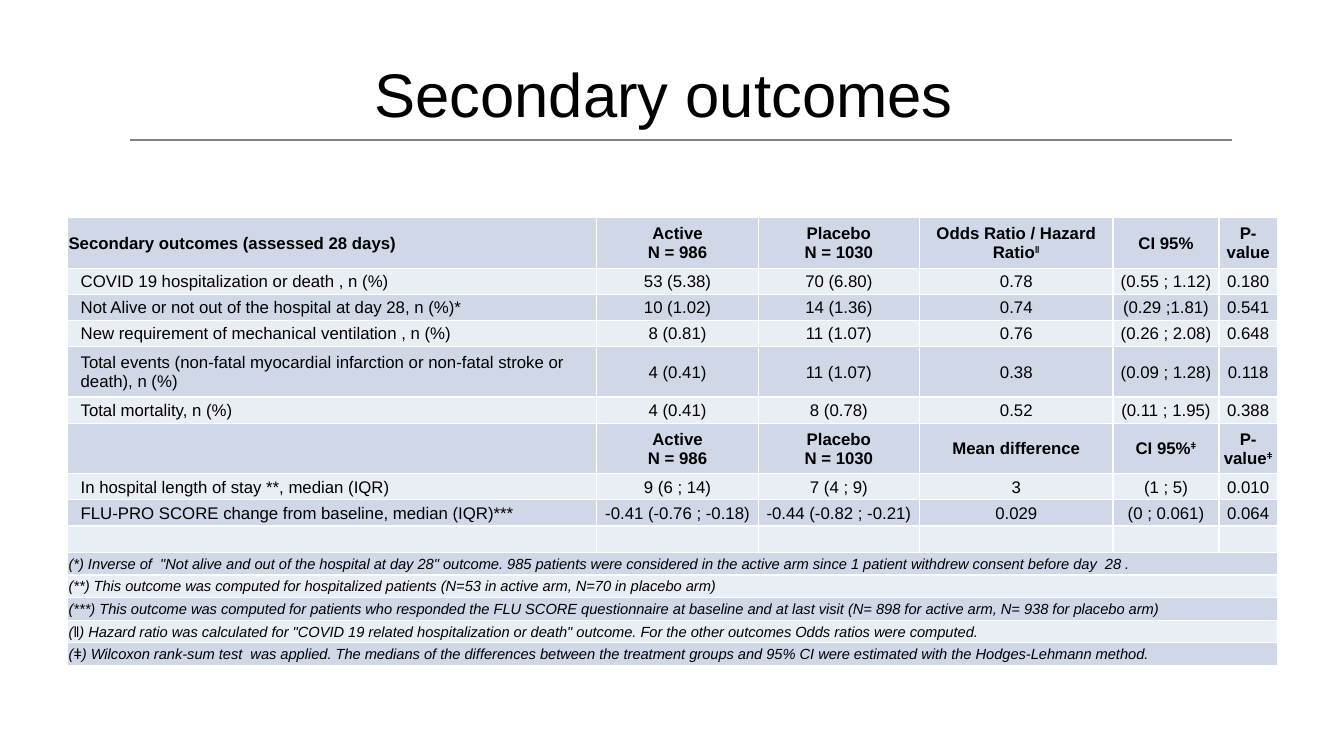
"""Build the secondary outcomes slide of a clinical trial report."""
from dataclasses import dataclass

from lxml.etree import SubElement
from pptx import Presentation
from pptx.dml.color import RGBColor
from pptx.enum.shapes import MSO_CONNECTOR
from pptx.enum.text import MSO_ANCHOR, PP_ALIGN
from pptx.oxml import parse_xml
from pptx.oxml.ns import nsdecls, qn
from pptx.util import Inches, Pt

TITLE = "Secondary outcomes "
ARMS = ("Active\nN = 986", "Placebo\nN = 1030")
RATIO_HEADER = ("Secondary outcomes (assessed 28 days)", *ARMS,
                "Odds Ratio / Hazard Ratio^ǁ", "CI 95%", "P-value")
RATIO_OUTCOMES = [
    ("COVID 19 hospitalization or death , n (%)",
     "53 (5.38)", "70 (6.80)", "0.78", "(0.55 ; 1.12)", "0.180"),
    ("Not Alive or not out of the hospital at day 28, n (%)*",
     "10 (1.02)", "14 (1.36)", "0.74", "(0.29 ;1.81)", "0.541"),
    ("New requirement of mechanical ventilation , n (%)",
     "8 (0.81)", "11 (1.07)", "0.76", "(0.26 ; 2.08)", "0.648"),
    ("Total events (non-fatal myocardial infarction or non-fatal stroke or death), n (%)",
     "4 (0.41)", "11 (1.07)", "0.38", "(0.09 ; 1.28)", "0.118"),
    ("Total mortality, n (%)",
     "4 (0.41)", "8 (0.78)", "0.52", "(0.11 ; 1.95)", "0.388"),
]
DIFFERENCE_HEADER = ("", *ARMS, "Mean difference", "CI 95%^ǂ", "P-value^ǂ")
DIFFERENCE_OUTCOMES = [
    ("In hospital length of stay **, median (IQR)",
     "9 (6 ; 14)", "7 (4 ; 9)", "3", "(1 ; 5)", "0.010"),
    ("FLU-PRO SCORE change from baseline, median (IQR)***",
     "-0.41 (-0.76 ; -0.18)", "-0.44 (-0.82 ; -0.21)", "0.029", "(0 ; 0.061)", "0.064"),
]
SPACER = ("",) * 6
FOOTNOTES = [
    '(*) Inverse of  "Not alive and out of the hospital at day 28" outcome. 985 patients were '
    "considered in the active arm since 1 patient withdrew consent before day  28 .",
    "(**) This outcome was computed for hospitalized patients (N=53 in active arm, "
    "N=70 in placebo arm)",
    "(***) This outcome was computed for patients who responded the FLU SCORE questionnaire "
    "at baseline and at last visit (N= 898 for active arm, N= 938 for placebo arm)",
    '(ǁ) Hazard ratio was calculated for "COVID 19 related hospitalization or death" outcome. '
    "For the other outcomes Odds ratios were computed.",
    "(ǂ) Wilcoxon rank-sum test  was applied. The medians of the differences between the "
    "treatment groups and 95% CI were estimated with the Hodges-Lehmann method.",
]
COLUMN_WIDTHS = (5.25, 1.6, 1.6, 1.92, 1.05, 0.58)
TALL, NORMAL, NOTE = 0.5, 0.26, 0.225
WRAP_LENGTH = 60


@dataclass(frozen=True)
class Theme:
    font: str = "Arial"
    ink: RGBColor = RGBColor(0, 0, 0)
    rule: RGBColor = RGBColor(0x80, 0x80, 0x80)
    bands: tuple = (RGBColor(0xD0, 0xD8, 0xE8), RGBColor(0xE9, 0xED, 0xF4))
    border: str = "FFFFFF"
    title_size: float = 44
    cell_size: float = 12
    note_size: float = 10.5


THEME = Theme()


def set_font(paragraph, size, bold=False, italic=False):
    font = paragraph.font
    font.name, font.size, font.bold, font.italic = THEME.font, Pt(size), bold, italic
    font.color.rgb = THEME.ink


def style_cell(cell, band):
    cell.margin_left = cell.margin_right = cell.margin_top = Inches(0.01)
    cell.margin_bottom = 0
    cell.vertical_anchor = MSO_ANCHOR.MIDDLE
    properties = cell._tc.get_or_add_tcPr()
    for order, side in enumerate("LRTB"):
        properties.insert(order, parse_xml(
            f'<a:ln{side} {nsdecls("a")} w="12700"><a:solidFill>'
            f'<a:srgbClr val="{THEME.border}"/></a:solidFill></a:ln{side}>'))
    cell.fill.solid()
    cell.fill.fore_color.rgb = THEME.bands[band]


def write_cell(cell, content, size, **emphasis):
    paragraph = cell.text_frame.paragraphs[0]
    label, _, marker = content.partition("^")
    paragraph.text = label
    if marker:
        superscript = paragraph.add_run()
        superscript.text = marker
        superscript.font._element.set("baseline", "30000")
    set_font(paragraph, size, **emphasis)
    if not content:
        paragraph._p.get_or_add_endParaRPr().set("sz", str(int(size * 100)))
    return paragraph


def add_outcomes_table(slide):
    headers = (RATIO_HEADER, DIFFERENCE_HEADER)
    results = [RATIO_HEADER, *RATIO_OUTCOMES, DIFFERENCE_HEADER, *DIFFERENCE_OUTCOMES, SPACER]
    heights = [TALL if row in headers or len(row[0]) > WRAP_LENGTH else NORMAL
               for row in results] + [NOTE] * len(FOOTNOTES)
    table = slide.shapes.add_table(
        len(heights), len(COLUMN_WIDTHS), Inches(0.67), Inches(2.16),
        Inches(sum(COLUMN_WIDTHS)), Inches(sum(heights))).table
    table.first_row = table.horz_banding = False
    for column, width in zip(table.columns, COLUMN_WIDTHS):
        column.width = Inches(width)
    for index, (row, height) in enumerate(zip(table.rows, heights)):
        row.height = Inches(height)
        for cell in row.cells:
            style_cell(cell, index % 2)

    for index, outcome in enumerate(results):
        is_header = outcome in headers
        for position, content in enumerate(outcome):
            paragraph = write_cell(table.cell(index, position), content,
                                   THEME.cell_size, bold=is_header)
            if position:
                paragraph.alignment = PP_ALIGN.CENTER
            elif not is_header:
                paragraph._p.get_or_add_pPr().set("marL", str(Inches(0.12)))
    for index, footnote in enumerate(FOOTNOTES, start=len(results)):
        first = table.cell(index, 0)
        first.merge(table.cell(index, len(COLUMN_WIDTHS) - 1))
        write_cell(first, footnote, THEME.note_size, italic=True)


def add_title(slide):
    title = slide.shapes.title
    title.left, title.top, title.width, title.height = map(Inches, (0.67, 0.3, 12, 1.25))
    title.text_frame.vertical_anchor = MSO_ANCHOR.MIDDLE
    heading = title.text_frame.paragraphs[0]
    heading.text = TITLE
    heading.alignment = PP_ALIGN.CENTER
    set_font(heading, THEME.title_size)


def add_title_rule(slide):
    rule = slide.shapes.add_connector(MSO_CONNECTOR.STRAIGHT, Inches(1.29), Inches(1.39),
                                      Inches(12.22), Inches(1.39))
    rule.line.color.rgb = THEME.rule
    rule.line.width = Pt(1)
    SubElement(rule._element.spPr, qn("a:effectLst"))


def main():
    deck = Presentation()
    deck.slide_width, deck.slide_height = Inches(13.33), Inches(7.5)
    slide = deck.slides.add_slide(deck.slide_layouts[5])
    add_title_rule(slide)
    add_outcomes_table(slide)
    add_title(slide)
    deck.save("out.pptx")


if __name__ == "__main__":
    main()
